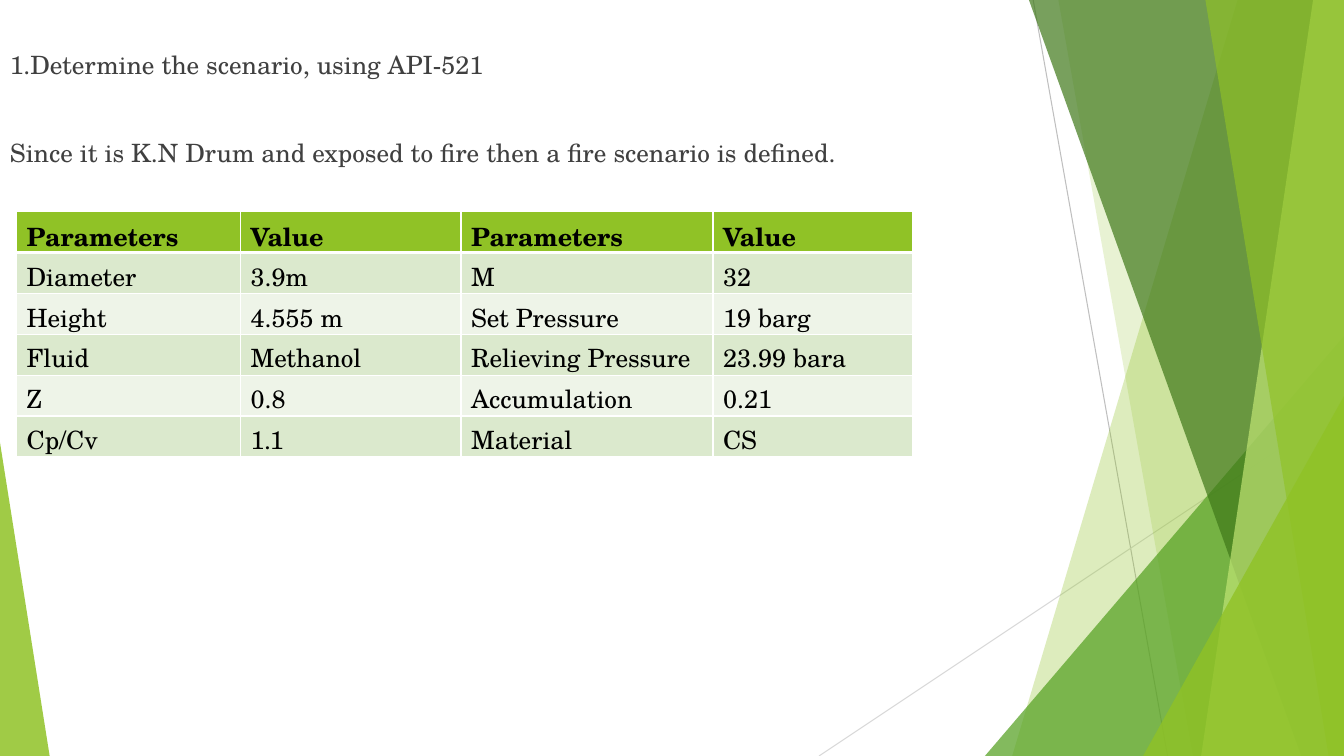
from lxml import etree
from pptx import Presentation
from pptx.dml.color import RGBColor
from pptx.enum import shapes as kinds
from pptx.oxml import ns
from pptx.util import Pt

LIME = RGBColor(0x90, 0xC2, 0x26)
PALE_LIME = RGBColor(0xC0, 0xE4, 0x74)
GREEN = RGBColor(0x54, 0xA0, 0x21)
DARK_GREEN = RGBColor(0x3F, 0x78, 0x19)
ROW_TINTS = [RGBColor(0xEE, 0xF4, 0xE8), RGBColor(0xDB, 0xE9, 0xCD)]
GRAY = RGBColor(0xBF, 0xBF, 0xBF)
LIGHT_GRAY = RGBColor(0xD9, 0xD9, 0xD9)
TEXT_GRAY = RGBColor(0x40, 0x40, 0x40)
BLACK = RGBColor(0, 0, 0)
WHITE = RGBColor(0xFF, 0xFF, 0xFF)
FONT = "TeX Gyre Schola"
WIDTH, HEIGHT = 960, 540


def paint(facet, color, opacity):
    """Give a facet a translucent fill, without outline or shadow."""
    facet.shadow.inherit = False
    facet.line.fill.background()
    facet.fill.solid()
    facet.fill.fore_color.rgb = color
    srgb = facet.fill._xPr.find(".//" + ns.qn("a:srgbClr"))
    etree.SubElement(srgb, ns.qn("a:alpha"), val=str(opacity * 1000))


def style_run(run, color, bold=False):
    run.font.name = FONT
    run.font.size = Pt(18)
    run.font.color.rgb = color
    run.font.bold = bold


deck = Presentation()
deck.slide_width, deck.slide_height = Pt(WIDTH), Pt(HEIGHT)
slide = deck.slides.add_slide(deck.slide_layouts[6])

# Thin background lines
for x1, y1, x2, y2, color in [
    (738, 0, 834, HEIGHT, GRAY),
    (WIDTH, 290, 585, HEIGHT, LIGHT_GRAY),
]:
    ray = slide.shapes.add_connector(
        kinds.MSO_CONNECTOR.STRAIGHT, Pt(x1), Pt(y1), Pt(x2), Pt(y2))
    ray.line.color.rgb = color
    ray.line.width = Pt(0.75)
    etree.SubElement(ray._element.spPr, ns.qn("a:effectLst"))

# Facets, back to front. A band reaches the right edge from a slanted left side
# (top x, bottom x); a triangle stands on the bottom edge (left, top, width, apex).
for corners, color, opacity in [
    ((884, 723), LIME, 30),
    ((756, 852), LIME, 20),
    ((703.5, 240, 256.5, 1), GREEN, 72),
    ((735, 929.5), DARK_GREEN, 70),
    ((938, 858), PALE_LIME, 70),
    ((861, 949), LIME, 65),
    ((816.5, 283, 143.5, 1), LIME, 80),
    ((0, 316, 35.5, 0), LIME, 85),
]:
    if len(corners) == 2:
        top_x, bottom_x = corners
        outline = slide.shapes.build_freeform(Pt(top_x), 0)
        outline.add_line_segments([
            (Pt(WIDTH), 0), (Pt(WIDTH), Pt(HEIGHT)), (Pt(bottom_x), Pt(HEIGHT))])
        facet = outline.convert_to_shape()
    else:
        left, top, width, apex = corners
        facet = slide.shapes.add_shape(
            kinds.MSO_SHAPE.ISOSCELES_TRIANGLE,
            Pt(left), Pt(top), Pt(width), Pt(HEIGHT - top))
        facet.adjustments[0] = apex
    paint(facet, color, opacity)

# Scenario statement
scenario = slide.shapes.add_textbox(0, 0, Pt(WIDTH), Pt(HEIGHT)).text_frame
scenario.word_wrap = True
scenario.margin_top = Pt(35)
scenario.text = (
    "1.Determine the scenario, using API-521\n"
    "Since it is K.N Drum and exposed to fire then a fire scenario is defined.")
scenario.paragraphs[1].space_before = Pt(41.5)
for statement in scenario.paragraphs:
    style_run(statement.runs[0], TEXT_GRAY)

# Parameter table
parameters = [
    ("Parameters", "Value", "Parameters", "Value"),
    ("Diameter", "3.9m", "M", "32"),
    ("Height", "4.555 m", "Set Pressure", "19 barg"),
    ("Fluid", "Methanol", "Relieving Pressure", "23.99 bara"),
    ("Z", "0.8", "Accumulation", "0.21"),
    ("Cp/Cv", "1.1", "Material", "CS"),
]
column_widths = [160, 157.5, 180, 142.5]
row_height = 29.2
grid = slide.shapes.add_table(
    len(parameters), len(column_widths), Pt(11.8), Pt(151.2),
    Pt(sum(column_widths)), Pt(row_height * len(parameters))).table
for column, width in zip(grid.columns, column_widths):
    column.width = Pt(width)
for r, values in enumerate(parameters):
    grid.rows[r].height = Pt(row_height)
    is_header = r == 0
    for c, value in enumerate(values):
        cell = grid.cell(r, c)
        cell.text = value
        style_run(cell.text_frame.paragraphs[0].runs[0], BLACK, is_header)
        cell_format = cell._tc.get_or_add_tcPr()
        for side in ("lnL", "lnR", "lnT", "lnB"):
            thick = (is_header and side == "lnB") or (r == 1 and side == "lnT")
            border = etree.SubElement(
                cell_format, ns.qn("a:" + side), w=str(Pt(3 if thick else 1)))
            border_fill = etree.SubElement(border, ns.qn("a:solidFill"))
            etree.SubElement(border_fill, ns.qn("a:srgbClr"), val=str(WHITE))
        cell.fill.solid()
        cell.fill.fore_color.rgb = LIME if is_header else ROW_TINTS[r % 2]

deck.save("out.pptx")
